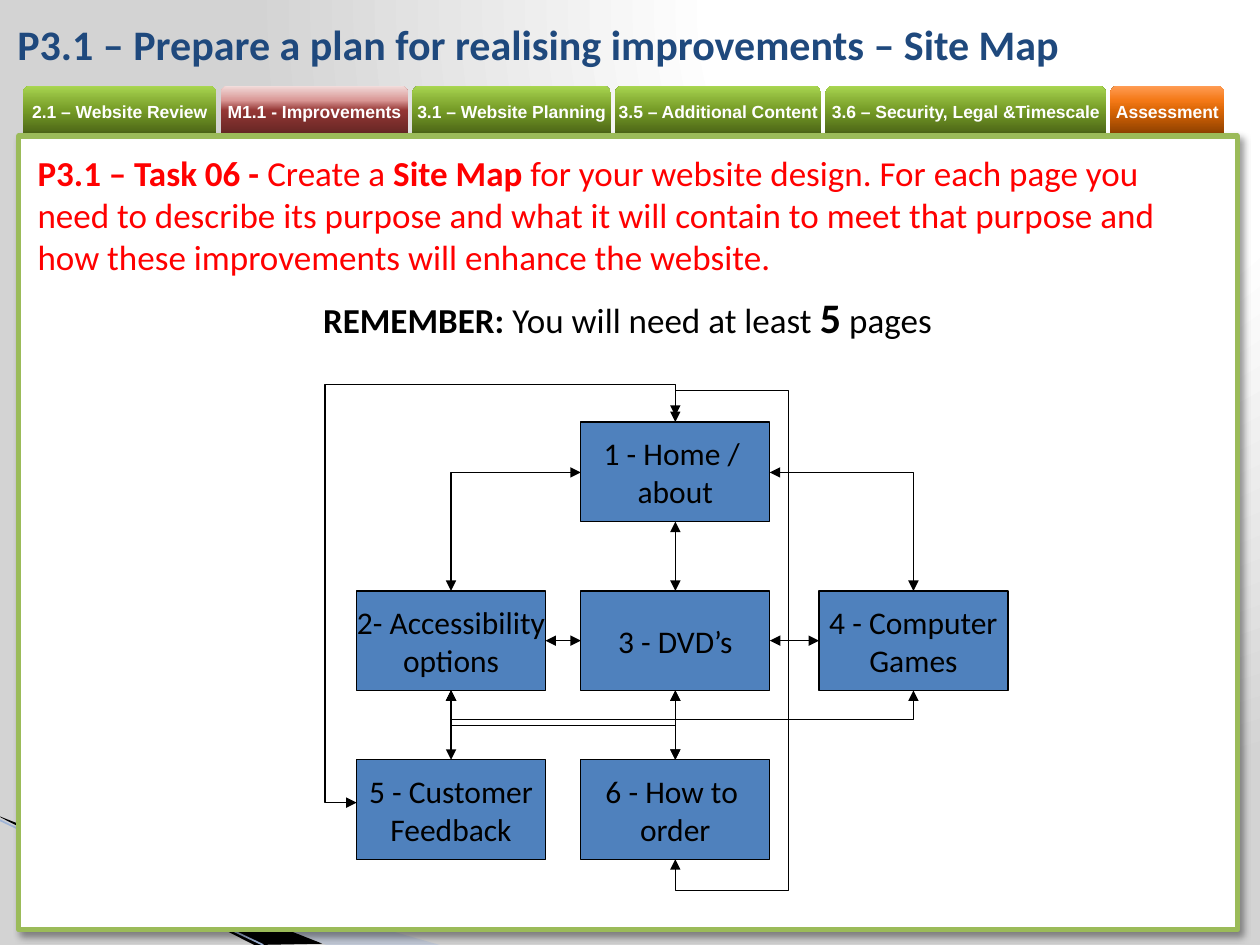
"""Build the site map planning slide with its navigation tabs and page diagram."""
from dataclasses import dataclass

from lxml import etree
from pptx import Presentation
from pptx import util as u
from pptx.dml.color import RGBColor
from pptx.enum import shapes, text
from pptx.oxml.ns import qn


@dataclass(frozen=True)
class Theme:
    body_font: str = "Calibri"
    tab_font: str = "Arial"
    title_size: int = 24
    task_size: int = 20
    page_size: int = 18
    tab_size: int = 10
    white: str = "FFFFFF"
    black: str = "000000"
    navy: str = "1F497D"
    red: str = "FF0000"
    blue: str = "4F81BD"
    frame: str = "9BBB59"
    pale_blue: str = "A7B9DB"
    streak: str = "9EB3D6"
    backdrop: tuple = ((0, "FFFFFF"), (40, "FFFFFF"), (100, "D3D3D3"))
    green_tab: tuple = ((0, "4A6316"), (50, "769C27"), (70, "89B137"), (100, "A9D651"))
    red_tab: tuple = ((0, "632523"), (50, "953735"), (70, "D99694"), (100, "F2DCDB"))
    orange_tab: tuple = ((0, "8B3F00"), (50, "DA6606"), (70, "F47917"), (100, "FF9C54"))


def child(parent, tag, **attributes):
    return etree.SubElement(parent, qn(tag), {k: str(v) for k, v in attributes.items()})


class SlideBuilder:
    def __init__(self, slide, theme):
        self.slide, self.theme = slide, theme

    def gradient(self, fill, owner, stops):
        fill.gradient()
        grad = next(owner.iter(qn("a:gradFill")))
        for old in list(grad):
            grad.remove(old)
        stop_list = child(grad, "a:gsLst")
        for position, color in stops:
            child(child(stop_list, "a:gs", pos=position * 1000), "a:srgbClr", val=color)
        return grad

    def background(self):
        grad = self.gradient(self.slide.background.fill, self.slide._element, self.theme.backdrop)
        circle = child(grad, "a:path", path="circle")
        child(circle, "a:fillToRect", l=65000, t=0, r=0, b=98000)

    def stroke(self, line, color, width, arrows=False):
        line.color.rgb = RGBColor.from_string(color)
        line.width = u.Pt(width)
        if arrows:
            for end in ("a:headEnd", "a:tailEnd"):
                child(line._get_or_add_ln(), end, type="triangle")

    def outline(self, points, close):
        corners = [(u.Inches(x), u.Inches(y)) for x, y in points]
        builder = self.slide.shapes.build_freeform(*corners[0])
        builder.add_line_segments(corners[1:], close=close)
        shape = builder.convert_to_shape()
        shape.shadow.inherit = False
        return shape

    def wedge(self, points, color, alpha=100):
        shape = self.outline(points, True)
        shape.fill.solid()
        shape.fill.fore_color.rgb = RGBColor.from_string(color)
        shape.line.fill.background()
        if alpha < 100:
            child(next(shape._element.spPr.iter(qn("a:srgbClr"))), "a:alpha", val=alpha * 1000)

    def route(self, *points):
        shape = self.outline(points, False)
        shape.fill.background()
        self.stroke(shape.line, self.theme.black, 0.75, arrows=True)

    def straight(self, start, end, color, width, arrows=False):
        places = [u.Inches(v) for v in (*start, *end)]
        link = self.slide.shapes.add_connector(shapes.MSO_CONNECTOR.STRAIGHT, *places)
        self.stroke(link.line, color, width, arrows)
        child(link._element.spPr, "a:effectLst")
        return link

    def join(self, first, first_side, second, second_side):
        link = self.straight((0, 0), (1, 1), self.theme.black, 0.75, arrows=True)
        link.begin_connect(first, first_side)
        link.end_connect(second, second_side)

    def shape(self, kind, left, top, width, height):
        shape = self.slide.shapes.add_shape(kind, *map(u.Inches, (left, top, width, height)))
        shape.shadow.inherit = False
        return shape

    def panel(self, left, top, width, height, fill, line, line_width):
        panel = self.shape(shapes.MSO_SHAPE.RECTANGLE, left, top, width, height)
        panel.fill.solid()
        panel.fill.fore_color.rgb = RGBColor.from_string(fill)
        self.stroke(panel.line, line, line_width)
        return panel

    def cast_shadow(self, panel):
        effects = panel._element.spPr.find(qn("a:effectLst"))
        shadow = child(effects, "a:outerShdw", blurRad=u.Pt(4), dist=u.Pt(3), dir=45 * 60000)
        child(child(shadow, "a:srgbClr", val=self.theme.black), "a:alpha", val=40000)

    def style(self, run, font, size, color, bold=False):
        run.font.name, run.font.size, run.font.bold = font, u.Pt(size), bold
        run.font.color.rgb = RGBColor.from_string(color)

    def label(self, shape, words, font, size, color, bold=False):
        frame = shape.text_frame
        frame.text = words
        frame.vertical_anchor = text.MSO_ANCHOR.MIDDLE
        frame.word_wrap = False
        for paragraph in frame.paragraphs:
            paragraph.alignment = text.PP_ALIGN.CENTER
            for run in paragraph.runs:
                self.style(run, font, size, color, bold)
        return frame

    def tab(self, left, width, words, stops):
        tab = self.shape(shapes.MSO_SHAPE.ROUND_2_SAME_RECTANGLE, left, 0.68, width, 0.39)
        grad = self.gradient(tab.fill, tab._element, stops)
        child(grad, "a:lin", ang=270 * 60000, scaled=0)
        tab.line.fill.background()
        theme = self.theme
        frame = self.label(tab, words, theme.tab_font, theme.tab_size, theme.white, True)
        frame.margin_left = frame.margin_right = frame.margin_top = frame.margin_bottom = 0

    def page(self, left, top, words):
        theme = self.theme
        page = self.panel(left, top, 1.5, 0.79, theme.blue, theme.black, 0.75)
        self.label(page, words, theme.body_font, theme.page_size, theme.black)
        return page

    def text_box(self, left, top, width, height):
        frame = self.slide.shapes.add_textbox(*map(u.Inches, (left, top, width, height))).text_frame
        frame.word_wrap = True
        return frame

    def rich(self, paragraph, color, *pieces):
        for words, bold, size in pieces:
            run = paragraph.add_run()
            run.text = words
            self.style(run, self.theme.body_font, size, color, bold)


def main():
    deck = Presentation()
    deck.slide_width, deck.slide_height = u.Inches(10), u.Inches(7.5)
    theme = Theme()
    build = SlideBuilder(deck.slides.add_slide(deck.slide_layouts[6]), theme)

    build.background()
    build.wedge([(0, 6.5), (3.49, 7.5), (2.59, 7.5)], theme.pale_blue, 40)
    build.wedge([(0, 6.48), (2.56, 7.49), (2.02, 7.5), (0.01, 6.49)], theme.black)
    build.straight((0, 6.51), (2.09, 7.5), theme.streak, 0.95)

    tab_left = 0.18
    for width, words, stops in (
        (1.54, "2.1 – Website Review", theme.green_tab),
        (1.49, "M1.1 - Improvements", theme.red_tab),
        (1.58, "3.1 – Website Planning", theme.green_tab),
        (1.64, "3.5 – Additional Content", theme.green_tab),
        (2.23, "3.6 – Security, Legal &Timescale", theme.green_tab),
        (0.91, "Assessment", theme.orange_tab),
    ):
        build.tab(tab_left, width, words, stops)
        tab_left += width + 0.03
    build.cast_shadow(build.panel(0.15, 1.08, 9.67, 6.3, theme.white, theme.frame, 3))

    title = build.text_box(0.04, 0.05, 8.66, 0.6)
    title.vertical_anchor = text.MSO_ANCHOR.MIDDLE
    build.rich(title.paragraphs[0], theme.navy,
               ("P3.1 – Prepare a plan for realising improvements – Site Map", True, theme.title_size))

    brief = build.text_box(0.2, 1.15, 9.56, 1.42)
    task, reminder = brief.paragraphs[0], brief.add_paragraph()
    size = theme.task_size
    build.rich(task, theme.red, ("P3.1 – Task 06 -", True, size), (" Create a ", False, size),
               ("Site Map ", True, size),
               ("for your website design. For each page you need to describe its purpose and what it "
                "will contain to meet that purpose and how these improvements will enhance the website.",
                False, size))
    task.space_after = u.Pt(8)
    reminder.alignment = text.PP_ALIGN.CENTER
    build.rich(reminder, theme.black, ("REMEMBER:", True, size), (" You will need at least ", False, size),
               ("5", True, theme.title_size), (" pages", False, size))

    left, middle, right = 2.83, 4.61, 6.5
    top, centre, bottom = (3.35 + 1.34 * row for row in range(3))
    home = build.page(middle, top, "1 - Home / \nabout")
    access = build.page(left, centre, "2- Accessibility\noptions")
    dvds = build.page(middle, centre, "3 - DVD’s")
    games = build.page(right, centre, "4 - Computer\nGames")
    order = build.page(middle, bottom, "6 - How to \norder")
    feedback = build.page(left, bottom, "5 - Customer\nFeedback")

    for ends in ((dvds, 0, home, 2), (dvds, 2, order, 0), (dvds, 1, access, 3),
                 (games, 1, dvds, 3), (access, 2, feedback, 0)):
        build.join(*ends)

    left_mid, home_mid, right_mid = (x + 0.75 for x in (left, middle, right))
    home_side, centre_base = top + 0.4, centre + 0.79
    build.route((middle, home_side), (left_mid, home_side), (left_mid, centre))
    build.route((middle + 1.5, home_side), (right_mid, home_side), (right_mid, centre))
    build.route((home_mid, bottom + 0.79), (home_mid, 7.07), (6.26, 7.07),
                (6.26, 3.1), (home_mid, 3.1), (home_mid, top))
    build.route((home_mid, 3.3), (home_mid, 3.05), (2.58, 3.05), (2.58, 6.37), (left, 6.37))
    for lane, end_x, end_y in ((5.71, home_mid, centre_base), (5.71, right_mid, centre_base),
                               (5.76, home_mid, bottom)):
        build.route((left_mid, centre_base), (left_mid, lane), (end_x, lane), (end_x, end_y))

    deck.save("out.pptx")


if __name__ == "__main__":
    main()
